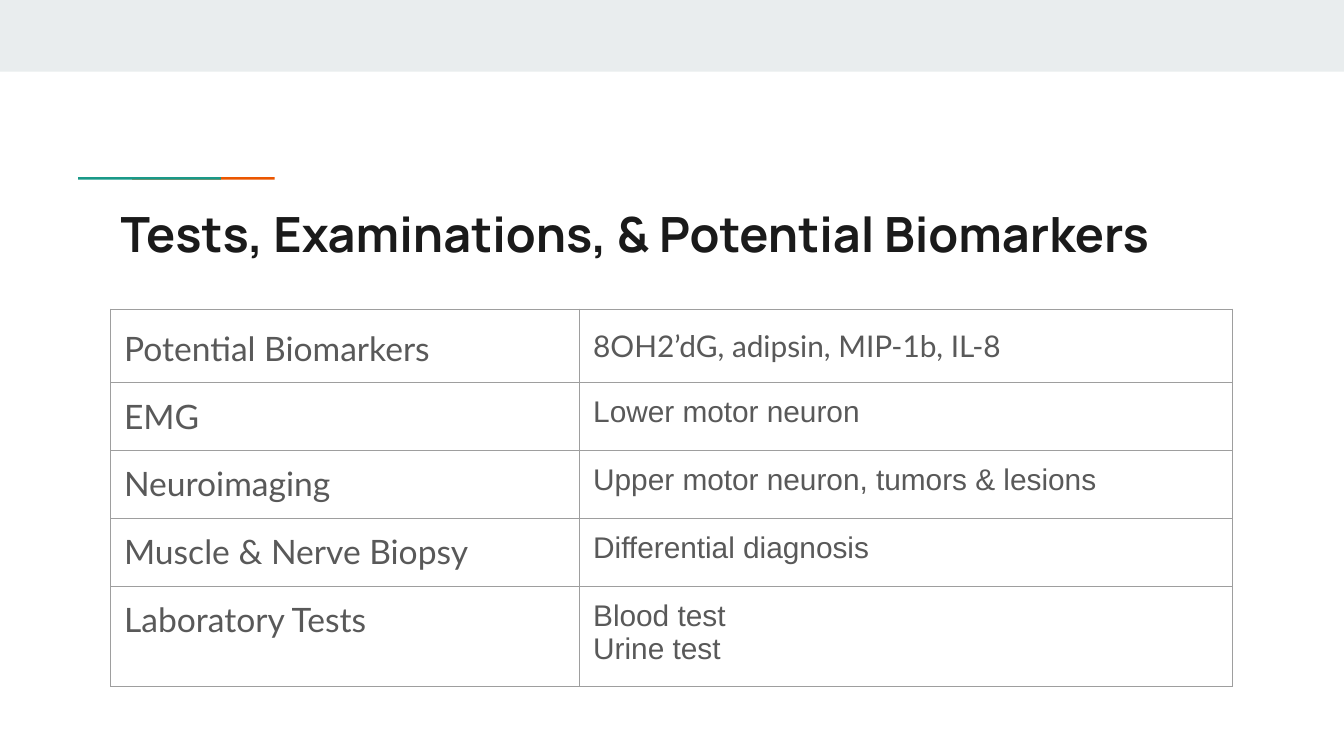
from lxml.etree import SubElement
from pptx import Presentation
from pptx.dml.color import RGBColor
from pptx.enum.shapes import MSO_SHAPE
from pptx.enum.text import MSO_ANCHOR, MSO_AUTO_SIZE, PP_ALIGN
from pptx.oxml.ns import qn
from pptx.util import Pt

INSET = 7.2
GRAY = "595959"
EDGE = "9E9E9E"
WIDTHS = [251.3, 349.9]
HEIGHTS = [36.45] * 4 + [53.8]
ROWS = [
    ("Potential Biomarkers", "8OH2’dG, adipsin, MIP-1b, IL-8"),
    ("EMG", "Lower motor neuron"),
    ("Neuroimaging", "Upper motor neuron, tumors & lesions"),
    ("Muscle & Nerve Biopsy", "Differential diagnosis"),
    ("Laboratory Tests", "Blood test\nUrine test"),
]


def color(code):
    """Turn a hex string into a colour."""
    return RGBColor.from_string(code)


def style(para, font, size, code, bold=False):
    """Format every run of a paragraph."""
    for run in para.runs:
        run.font.name = font
        run.font.size = Pt(size)
        run.font.bold = bold
        run.font.color.rgb = color(code)


def pad(box):
    """Give a cell or text frame equal insets."""
    box.margin_left = box.margin_right = Pt(INSET)
    box.margin_top = box.margin_bottom = Pt(INSET)


def add_bar(owner, left, top, width, height, code, turn=0):
    """Draw a plain filled rectangle."""
    bar = owner.shapes.add_shape(
        MSO_SHAPE.RECTANGLE, Pt(left), Pt(top), Pt(width), Pt(height))
    bar.rotation = turn
    bar.shadow.inherit = False
    bar.fill.solid()
    bar.fill.fore_color.rgb = color(code)
    bar.line.fill.background()


def add_accent(slide):
    """Draw the two-colour rule as a stretched group of turned bars."""
    group = slide.shapes.add_group_shape()
    add_bar(group, 89.46, 80.75, 1.39, 29.5, "EB5600", 270)
    add_bar(group, 78.3, 80.75, 1.39, 29.5, "1A9988", 270)
    group.width = Pt(32.5)


def set_title(slide, text):
    """Place and format the title."""
    title = slide.shapes.title
    title.left, title.top = Pt(57.4), Pt(102.2)
    title.width, title.height = Pt(605.5), Pt(42.5)
    frame = title.text_frame
    frame.text = text
    frame.word_wrap = True
    frame.auto_size = MSO_AUTO_SIZE.NONE
    frame.vertical_anchor = MSO_ANCHOR.TOP
    pad(frame)
    para = frame.paragraphs[0]
    para.alignment = PP_ALIGN.LEFT
    para.line_spacing = 1.0
    style(para, "Manrope", 26, "1A1A1A", True)


def set_edges(cell):
    """Outline all four sides of a cell."""
    props = cell._tc.get_or_add_tcPr()
    for side in ("lnL", "lnR", "lnT", "lnB"):
        line = SubElement(props, qn(f"a:{side}"), w=str(Pt(0.75)))
        fill = SubElement(line, qn("a:solidFill"))
        SubElement(fill, qn("a:srgbClr"), val=EDGE)


def fill_cell(cell, text, font, size, space):
    """Write and format one table cell."""
    cell.text_frame.text = text
    pad(cell)
    set_edges(cell)
    cell.fill.background()
    for para in cell.text_frame.paragraphs:
        para.line_spacing = space
        style(para, font, size, GRAY)


def add_grid(slide):
    """Build the table of tests."""
    table = slide.shapes.add_table(
        len(ROWS), len(WIDTHS), Pt(59.3), Pt(165.6),
        Pt(sum(WIDTHS)), Pt(sum(HEIGHTS))).table
    table.first_row = table.horz_banding = False
    for col, width in zip(table.columns, WIDTHS):
        col.width = Pt(width)
    for i, (name, note) in enumerate(ROWS):
        table.rows[i].height = Pt(HEIGHTS[i])
        space = 1.0 if i else 1.15
        fill_cell(table.cell(i, 0), name, "Lato", 18, space)
        fill_cell(table.cell(i, 1), note, "Arial" if i else "Lato", 16, space)


def main():
    """Build and save the slide."""
    deck = Presentation()
    deck.slide_width, deck.slide_height = Pt(720), Pt(405)
    slide = deck.slides.add_slide(deck.slide_layouts[5])
    add_bar(slide, 0, 0, 720, 38.4, "E9EDEE")
    add_accent(slide)
    set_title(slide, "Tests, Examinations, & Potential Biomarkers")
    add_grid(slide)
    deck.save("out.pptx")


if __name__ == "__main__":
    main()
